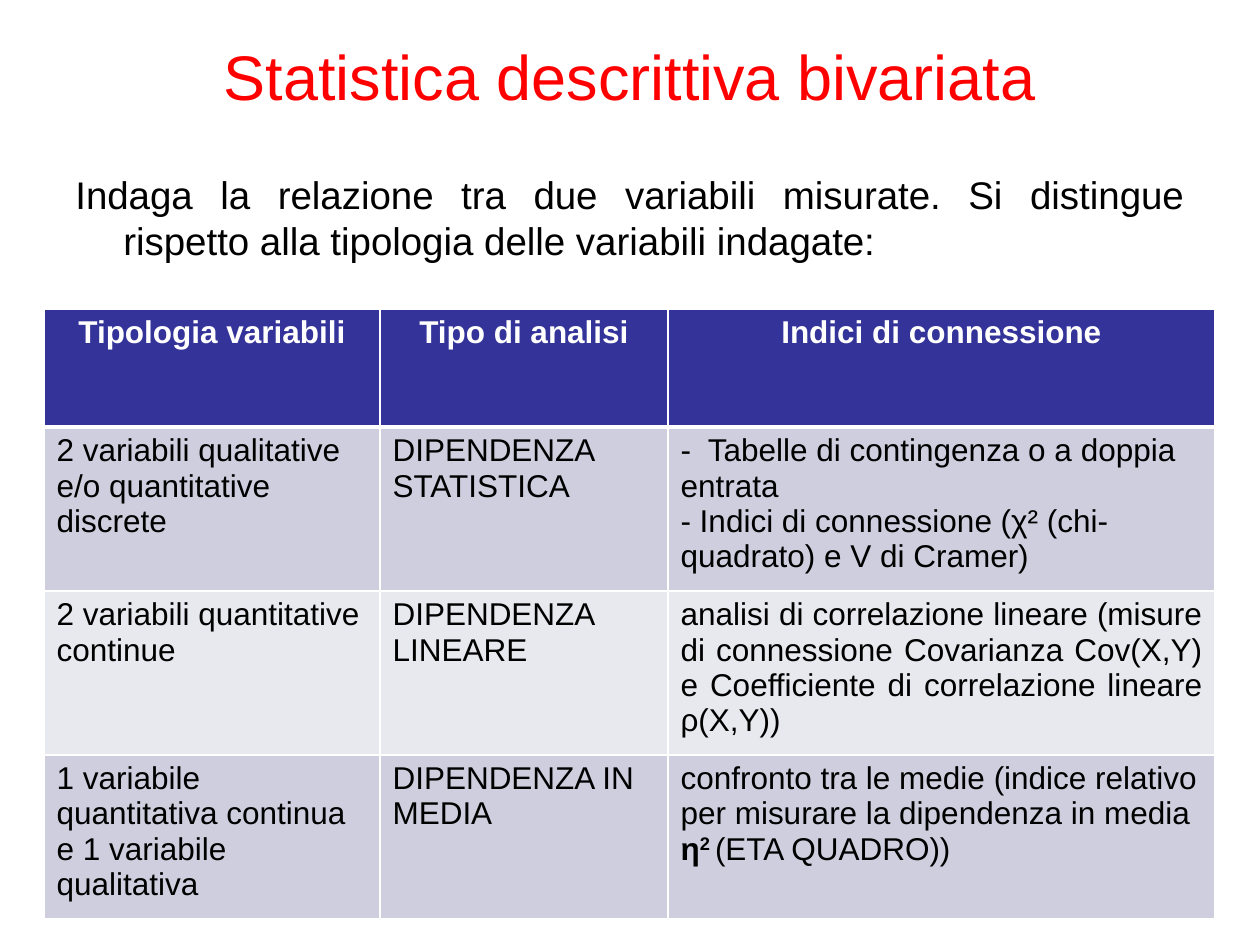
"""Build a slide on bivariate descriptive statistics."""
from lxml.etree import SubElement as Sub
from pptx import Presentation
from pptx.dml.color import RGBColor as Rgb
from pptx.enum.text import MSO_ANCHOR as Anchor, PP_ALIGN as Align
from pptx.oxml.ns import qn
from pptx.util import Pt

PX = 914400 // 126
COLORS = {"title": "FF0000", "text": "000000", "light": "FFFFFF",
          "head": "333399", "odd": "CECEDE", "even": "E8E8EF"}

TITLE = "Statistica descrittiva bivariata"
INTRO = ("Indaga la relazione tra due variabili misurate. Si distingue "
         "rispetto alla tipologia delle variabili indagate:")
HEADS = ["Tipologia variabili", "Tipo di analisi", "Indici di connessione"]
ROWS = [
    ["2 variabili qualitative e/o quantitative discrete",
     "DIPENDENZA STATISTICA",
     ["-  Tabelle di contingenza o a doppia entrata",
      "- Indici di connessione (χ² (chi-quadrato) e V di Cramer)"]],
    ["2 variabili quantitative continue",
     "DIPENDENZA LINEARE",
     "analisi di correlazione lineare (misure di connessione Covarianza "
     "Cov(X,Y) e Coefficiente di correlazione lineare ρ(X,Y))"],
    ["1 variabile quantitativa continua e 1 variabile qualitativa",
     "DIPENDENZA IN MEDIA",
     [[("confronto tra le medie (indice relativo per misurare la dipendenza "
        "in media  ", {}), ("η", {"bold": True}),
       ("2 ", {"bold": True, "base": 30}), ("(ETA QUADRO))", {})]]],
]
WIDTHS = [336, 288, 547]
HEIGHTS = [118, 164, 154, 163]
TABLE = (44, 309)
TITLE_BOX = (63, -4, 1134, 158)
INTRO_BOX = (63, 165, 1134, 103)


def write(frame, text, size, color, align=Align.LEFT, bold=False):
    for i, para in enumerate(text if isinstance(text, list) else [text]):
        p = frame.add_paragraph() if i else frame.paragraphs[0]
        p.alignment = align
        for words, extra in para if isinstance(para, list) else [(para, {})]:
            run = p.add_run()
            run.text = words
            look = {"name": "Arial", "size": Pt(size), "bold": bold} | extra
            base = look.pop("base", 0)
            for key, value in look.items():
                setattr(run.font, key, value)
            run.font.color.rgb = Rgb.from_string(COLORS[color])
            if base:
                run._r.get_or_add_rPr().set("baseline", str(base * 1000))


def add_box(slide, box, *style):
    frame = slide.shapes.add_textbox(*(n * PX for n in box)).text_frame
    frame.word_wrap = True
    write(frame, *style)
    return frame


def edge(cell, widths):
    props = cell._tc.get_or_add_tcPr()
    for i, (side, width) in enumerate(widths.items()):
        line = Sub(props, qn(f"a:ln{side}"), w=str(Pt(width)))
        fill = Sub(line, qn("a:solidFill"))
        Sub(fill, qn("a:srgbClr"), val=COLORS["light"])
        props.insert(i, line)


def add_grid(slide):
    size = sum(WIDTHS), sum(HEIGHTS)
    rows = [HEADS] + ROWS
    grid = slide.shapes.add_table(len(rows), len(HEADS),
                                  *(n * PX for n in TABLE + size)).table
    for col, width in zip(grid.columns, WIDTHS):
        col.width = width * PX
    for r, row in enumerate(rows):
        grid.rows[r].height = HEIGHTS[r] * PX
        shade = "head" if r == 0 else "odd" if r % 2 else "even"
        for c, text in enumerate(row):
            cell = grid.cell(r, c)
            cell.fill.solid()
            cell.fill.fore_color.rgb = Rgb.from_string(COLORS[shade])
            edge(cell, {"L": 1, "R": 1, "T": 3 if r == 1 else 1,
                        "B": 3 if r == 0 else 1})
            align = (Align.CENTER if r == 0 else
                     Align.JUSTIFY if (r, c) == (2, 2) else Align.LEFT)
            write(cell.text_frame, text, 18, "text" if r else "light",
                  align, r == 0)


def main():
    deck = Presentation()
    deck.slide_width, deck.slide_height = 1260 * PX, 945 * PX
    slide = deck.slides.add_slide(deck.slide_layouts[6])
    title = add_box(slide, TITLE_BOX, TITLE, 36, "title", Align.CENTER)
    title.vertical_anchor = Anchor.MIDDLE
    add_grid(slide)
    intro = add_box(slide, INTRO_BOX, INTRO, 22, "text", Align.JUSTIFY)
    props = intro.paragraphs[0]._p.get_or_add_pPr()
    for key, value in {"marL": 48 * PX, "indent": -48 * PX}.items():
        props.set(key, str(value))
    intro.paragraphs[0].space_before = Pt(4.4)
    deck.save("out.pptx")


if __name__ == "__main__":
    main()
